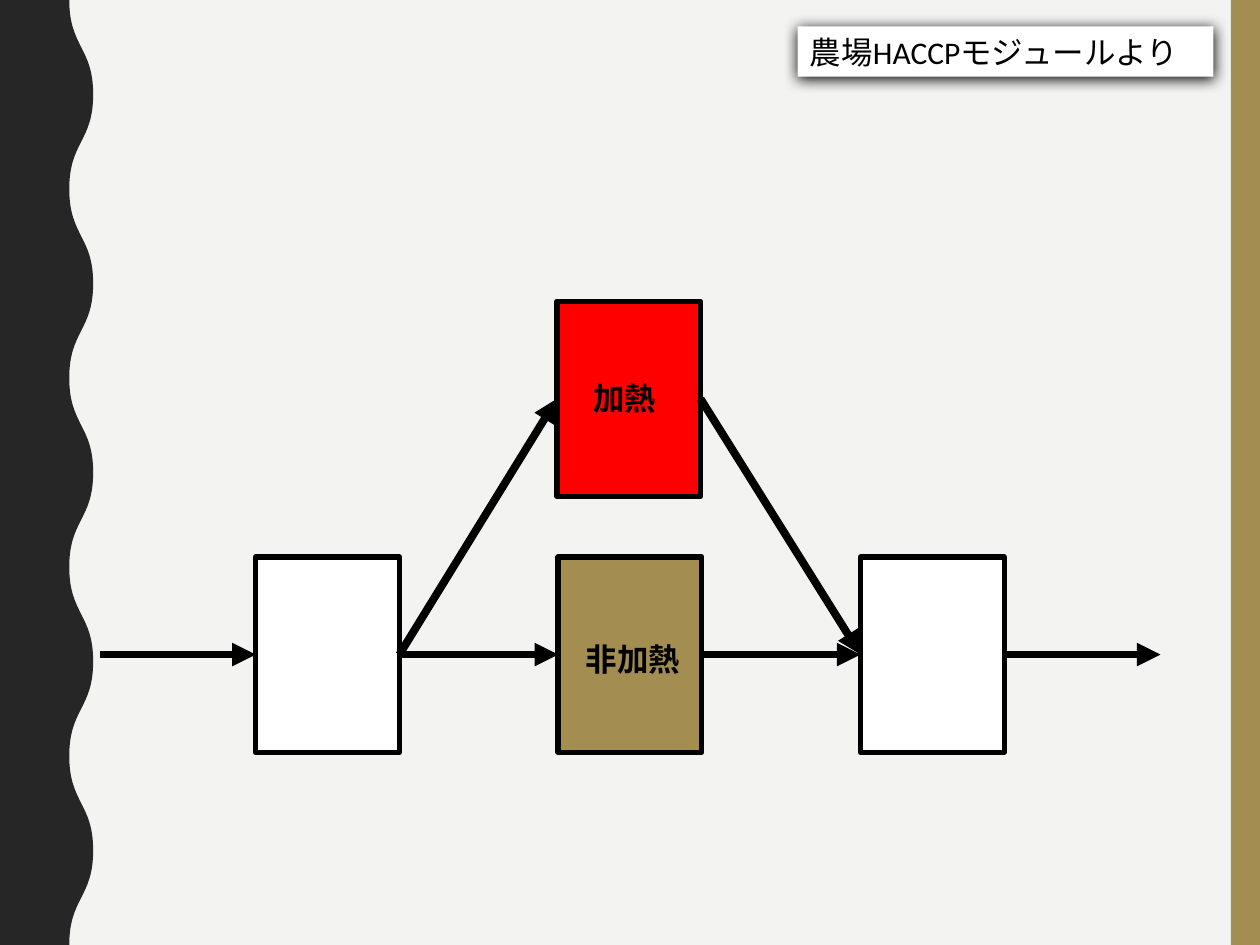
from lxml.etree import SubElement
from pptx import Presentation
from pptx.dml.color import RGBColor as Rgb
from pptx.enum.shapes import MSO_CONNECTOR as Conn, MSO_SHAPE as Shape
from pptx.enum.text import PP_ALIGN as Align
from pptx.oxml.ns import qn
from pptx.util import Inches, Pt

COLORS = {
    "back": "F3F3F2",
    "dark": "262626",
    "gold": "A38D51",
    "red": "FF0000",
    "white": "FFFFFF",
    "black": "000000",
}
BOX_W, BOX_H = 1.14, 1.55
LEFT, STEP = 2.03, 2.4
ROW, TOP = 4.42, 2.39
MID = ROW + BOX_H / 2


def tint(name):
    return Rgb.from_string(COLORS[name])


def paint(shape, name):
    shape.fill.solid()
    shape.fill.fore_color.rgb = tint(name)


def add_box(slide, x, y, w, h, fill, line=None):
    box = slide.shapes.add_shape(
        Shape.RECTANGLE, Inches(x), Inches(y), Inches(w), Inches(h))
    box.shadow.inherit = False
    paint(box, fill)
    if line:
        box.line.color.rgb = tint("black")
        box.line.width = Pt(line)
    else:
        box.line.fill.background()
    return box


def add_wave(slide, low=0.55, high=0.74, half=0.75, count=10):
    edge = [(Inches((low, high)[i % 2]), Inches(i * half))
            for i in range(count + 1)]
    form = slide.shapes.build_freeform(0, 0)
    form.add_line_segments(edge + [(0, Inches(count * half))], close=True)
    wave = form.convert_to_shape()
    wave.shadow.inherit = False
    paint(wave, "dark")
    wave.line.fill.background()

    lines = list(wave._element.iter(qn("a:lnTo")))
    for line, (x1, y1), (x2, y2) in zip(lines[1:], edge, edge[1:]):
        mid = (y1 + y2) // 2
        line.tag = qn("a:cubicBezTo")
        for i, x in enumerate((x1, x2)):
            point = SubElement(line, qn("a:pt"), x=str(x), y=str(mid))
            line.insert(i, point)


def add_arrow(slide, start, end, tail=None, head=None):
    x1, y1, x2, y2 = (Inches(v) for v in (*start, *end))
    arrow = slide.shapes.add_connector(Conn.STRAIGHT, x1, y1, x2, y2)
    arrow.line.color.rgb = tint("black")
    arrow.line.width = Pt(4.5)
    SubElement(arrow.line._get_or_add_ln(), qn("a:tailEnd"), type="triangle")
    SubElement(arrow._element.spPr, qn("a:effectLst"))
    if tail:
        arrow.begin_connect(tail, 3)
    if head:
        arrow.end_connect(head, 1)


def write(shape, text, bold=False):
    shape.text_frame.word_wrap = True
    para = shape.text_frame.paragraphs[0]
    para.text = text
    para.alignment = Align.LEFT
    para.font.name = "Calibri"
    para.font.size = Pt(18)
    para.font.bold = bold
    para.font.color.rgb = tint("black")


def add_label(slide, text, x, y, w, h):
    label = slide.shapes.add_textbox(
        Inches(x), Inches(y), Inches(w), Inches(h))
    write(label, text, True)


def add_shade(shape):
    effects = shape._element.spPr.find(qn("a:effectLst"))
    shade = SubElement(
        effects, qn("a:outerShdw"), blurRad=str(Pt(8.5)), dist=str(Pt(1)),
        dir="5400000", algn="ctr", rotWithShape="0")
    SubElement(shade, qn("a:srgbClr"), val=COLORS["black"])


def main():
    deck = Presentation()
    deck.slide_width, deck.slide_height = Inches(10), Inches(7.5)
    slide = deck.slides.add_slide(deck.slide_layouts[6])
    paint(slide.background, "back")

    add_box(slide, 9.77, 0, 0.23, 7.5, "gold")
    add_wave(slide)

    first, raw, last = [
        add_box(slide, LEFT + i * STEP, ROW, BOX_W, BOX_H, fill, 3)
        for i, fill in enumerate(("white", "gold", "white"))]
    heat = add_box(slide, 4.42, TOP, BOX_W, BOX_H, "red", 3)

    start, end = (0.79, MID), (9.21, MID)
    add_arrow(slide, start, (LEFT, MID), head=first)
    for tail, head in ((first, raw), (raw, last), (first, heat), (heat, last)):
        add_arrow(slide, start, end, tail, head)
    add_arrow(slide, (LEFT + 2 * STEP + BOX_W, MID), end, tail=last)

    add_label(slide, "加熱", 4.61, 2.96, 0.8, 0.4)
    add_label(slide, "非加熱", 4.55, 5.03, 1.03, 0.42)
    note = add_box(slide, 6.33, 0.21, 3.3, 0.4, "white")
    write(note, "農場HACCPモジュールより")
    add_shade(note)

    deck.save("out.pptx")


if __name__ == "__main__":
    main()
